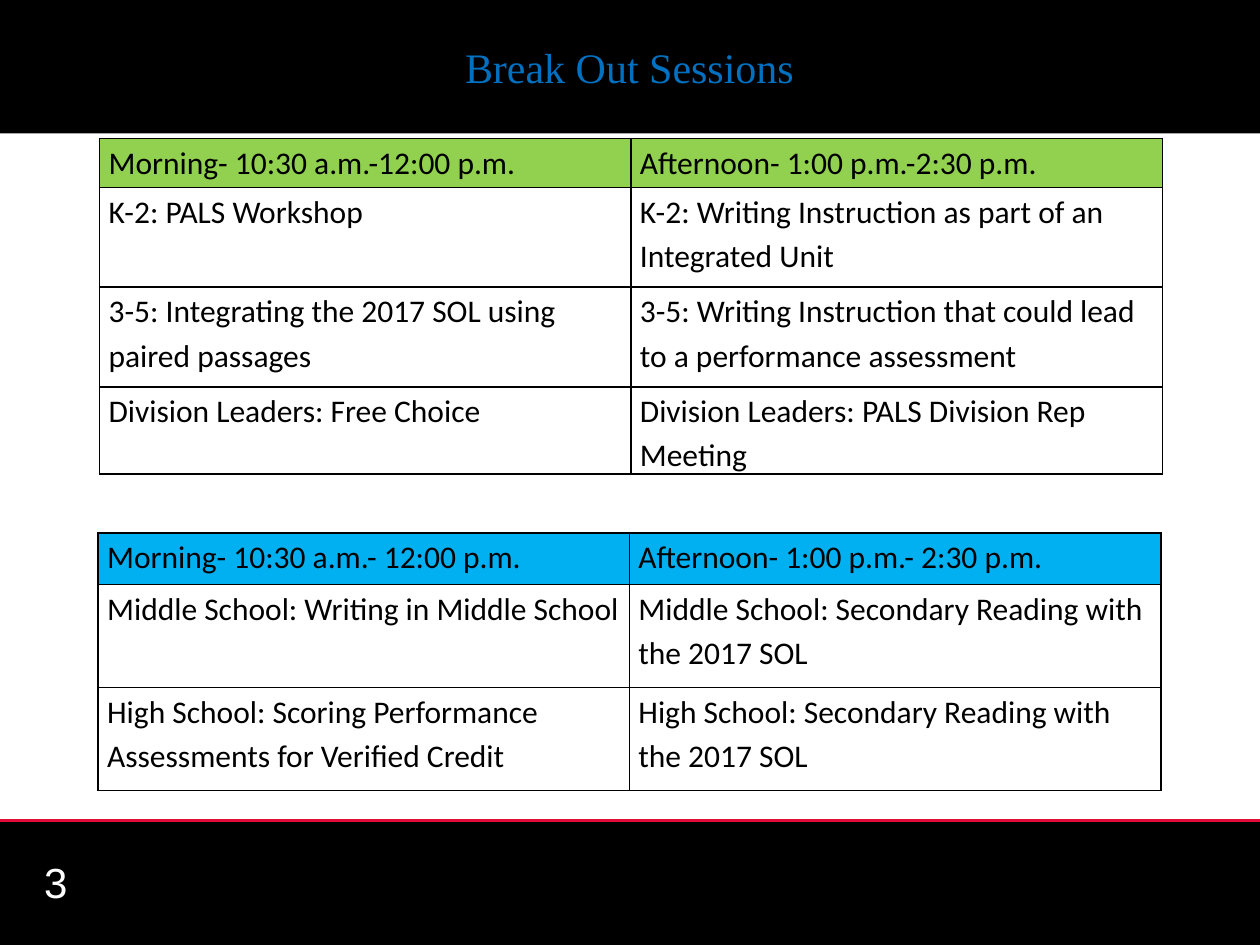
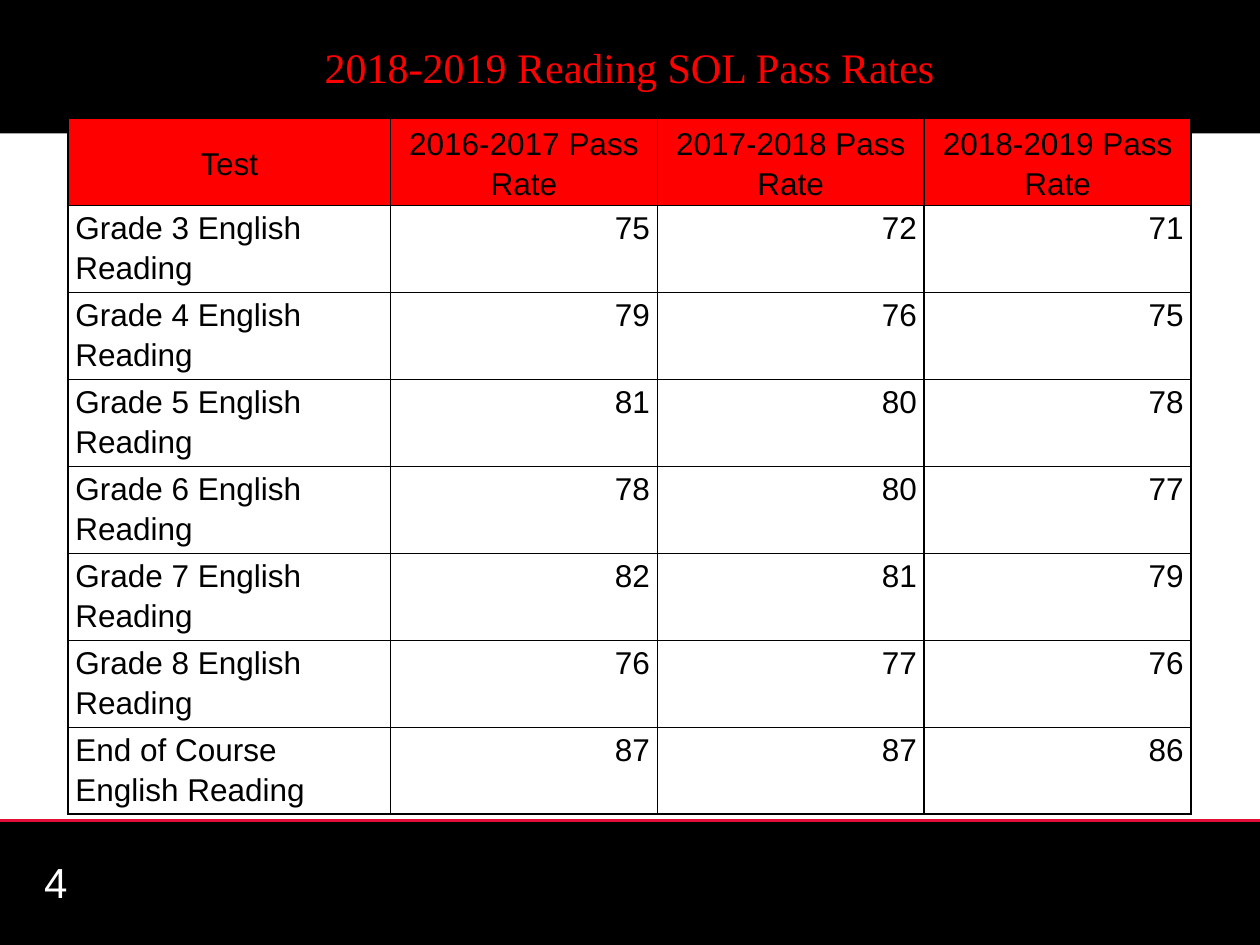
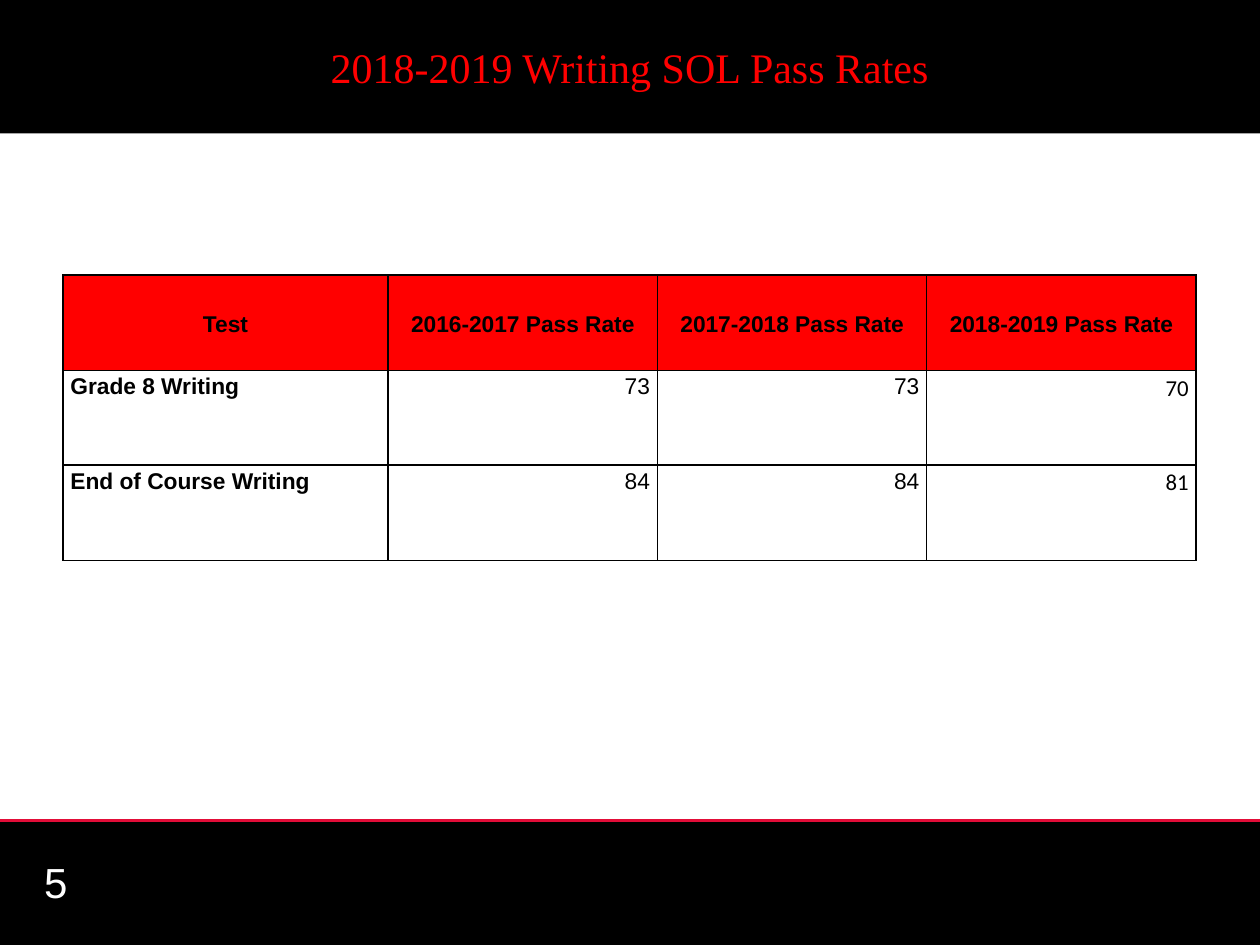
from dataclasses import dataclass

from lxml.etree import SubElement
from pptx import Presentation
from pptx.dml.color import RGBColor
from pptx.enum.shapes import MSO_CONNECTOR, MSO_SHAPE
from pptx.enum.text import MSO_ANCHOR, MSO_AUTO_SIZE, PP_ALIGN
from pptx.oxml.ns import qn
from pptx.slide import Slide
from pptx.table import _Cell
from pptx.text.text import TextFrame
from pptx.util import Cm, Pt


# Theme
@dataclass(frozen=True)
class Theme:
    black: str = "000000"
    white: str = "FFFFFF"
    rule: str = "E20D38"
    blue: str = "0070C0"
    red: str = "FF0000"
    green: str = "92D050"
    sky: str = "00B0F0"
    title_font: str = "Times New Roman"
    sans: str = "Arial"
    humanist: str = "Calibri"
    title_size: float = 24
    table_size: float = 18
    small_size: float = 13
    rule_width: float = 2
    border_width: float = 1
    table_spacing: float = 1.15


THEME = Theme()

# Shared bands, in centimetres
BAND_LEFT, BAND_WIDTH = -0.72, 26.82
TITLE_HEIGHT = 2.69
FOOTER_TOP, FOOTER_HEIGHT = 16.54, 2.54


@dataclass(frozen=True)
class Grid:
    """A table; lengths are in centimetres."""
    left: float
    top: float
    columns: list[float]
    heights: list[float]
    header_fill: str
    rows: list[tuple[str, ...]]
    font: str = THEME.sans
    last_font: str = THEME.sans
    size: float = THEME.table_size
    inset: float = 0.15
    rates: bool = True
    bold_labels: bool = False


@dataclass(frozen=True)
class Page:
    number: int
    title: str
    title_color: str
    grids: list[Grid]


# Content
RATE_HEADER = ("Test", "2016-2017 Pass Rate", "2017-2018 Pass Rate", "2018-2019 Pass Rate")

SECONDARY = Grid(
    1.98, 10.74, [10.71] * 2, [1.04, 2.08, 2.08], THEME.sky,
    [("Morning- 10:30 a.m.- 12:00 p.m.", "Afternoon- 1:00 p.m.- 2:30 p.m."),
     ("Middle School: Writing in Middle School",
      "Middle School: Secondary Reading with the 2017 SOL"),
     ("High School: Scoring Performance Assessments for Verified Credit",
      "High School: Secondary Reading with the 2017 SOL")],
    font=THEME.humanist, last_font=THEME.humanist, inset=0.18, rates=False)

ELEMENTARY = Grid(
    2.01, 2.79, [10.71] * 2, [0.99, 2.01, 2.01, 1.35], THEME.green,
    [("Morning- 10:30 a.m.-12:00 p.m.", "Afternoon- 1:00 p.m.-2:30 p.m."),
     ("K-2: PALS Workshop", "K-2: Writing Instruction as part of an Integrated Unit"),
     ("3-5: Integrating the 2017 SOL using paired passages",
      "3-5: Writing Instruction that could lead to a performance assessment"),
     ("Division Leaders: Free Choice", "Division Leaders: PALS Division Rep Meeting")],
    font=THEME.humanist, last_font=THEME.humanist, inset=0.18, rates=False)

READING = Grid(
    1.37, 2.39, [6.5] + [5.38] * 3, [1.74] * 8, THEME.red,
    [RATE_HEADER,
     ("Grade 3 English Reading", "75", "72", "71"),
     ("Grade 4 English Reading", "79", "76", "75"),
     ("Grade 5 English Reading", "81", "80", "78"),
     ("Grade 6 English Reading", "78", "80", "77"),
     ("Grade 7 English Reading", "82", "81", "79"),
     ("Grade 8 English Reading", "76", "77", "76"),
     ("End of Course English Reading", "87", "87", "86")])

WRITING = Grid(
    1.27, 5.54, [6.55] + [5.43] * 3, [1.93, 1.9, 1.93], THEME.red,
    [RATE_HEADER,
     ("Grade 8 Writing", "73", "73", "70"),
     ("End of Course Writing", "84", "84", "81")],
    last_font=THEME.humanist, size=THEME.small_size, bold_labels=True)

PAGES = [
    Page(3, "Break Out Sessions", THEME.blue, [SECONDARY, ELEMENTARY]),
    Page(4, "2018-2019 Reading SOL Pass Rates", THEME.red, [READING]),
    Page(5, "2018-2019 Writing SOL Pass Rates", THEME.red, [WRITING]),
]


# Drawing
def write(frame: TextFrame, text: str, *, font: str, size: float, color: str,
          bold: bool = False, align: PP_ALIGN = PP_ALIGN.LEFT, spacing: float = 1.0) -> None:
    para = frame.paragraphs[0]
    para.alignment = align
    para.line_spacing = spacing
    span = para.add_run()
    span.text = text
    span.font.name = font
    span.font.size = Pt(size)
    span.font.bold = bold
    span.font.color.rgb = RGBColor.from_string(color)


def draw_title(slide: Slide, page: Page) -> None:
    box = slide.shapes.title
    box.left, box.top = Cm(BAND_LEFT), Cm(0)
    box.width, box.height = Cm(BAND_WIDTH), Cm(TITLE_HEIGHT)
    box.fill.solid()
    box.fill.fore_color.rgb = RGBColor.from_string(THEME.black)
    frame = box.text_frame
    frame.auto_size = MSO_AUTO_SIZE.NONE
    frame.vertical_anchor = MSO_ANCHOR.MIDDLE
    frame.margin_left = frame.margin_right = Cm(1.27)
    frame.margin_top = frame.margin_bottom = 0
    write(frame, page.title, font=THEME.title_font, size=THEME.title_size,
          color=page.title_color, align=PP_ALIGN.CENTER)


def draw_footer(slide: Slide, number: int) -> None:
    band = slide.shapes.add_shape(MSO_SHAPE.RECTANGLE, Cm(BAND_LEFT), Cm(FOOTER_TOP),
                                  Cm(BAND_WIDTH), Cm(FOOTER_HEIGHT))
    band.shadow.inherit = False
    band.fill.solid()
    band.fill.fore_color.rgb = RGBColor.from_string(THEME.black)
    band.line.fill.background()

    rule = slide.shapes.add_connector(MSO_CONNECTOR.STRAIGHT, Cm(BAND_LEFT), Cm(FOOTER_TOP),
                                      Cm(BAND_LEFT + BAND_WIDTH), Cm(FOOTER_TOP))
    rule.line.color.rgb = RGBColor.from_string(THEME.rule)
    rule.line.width = Pt(THEME.rule_width)
    SubElement(rule._element.spPr, qn("a:effectLst"))

    box = slide.shapes.add_textbox(Cm(0.64), Cm(17.27), Cm(5.92), Cm(1.02))
    box.text_frame.word_wrap = True
    box.text_frame.vertical_anchor = MSO_ANCHOR.MIDDLE
    write(box.text_frame, str(number), font=THEME.sans, size=THEME.title_size,
          color=THEME.white)


def draw_borders(cell: _Cell) -> None:
    properties = cell._tc.get_or_add_tcPr()
    for side in ("lnL", "lnR", "lnT", "lnB"):
        line = SubElement(properties, qn(f"a:{side}"), w=str(Pt(THEME.border_width)))
        fill = SubElement(line, qn("a:solidFill"))
        SubElement(fill, qn("a:srgbClr"), val=THEME.black)


def draw_cell(cell: _Cell, text: str, grid: Grid, row: int, column: int) -> None:
    header = row == 0
    draw_borders(cell)
    if header:
        cell.fill.solid()
        cell.fill.fore_color.rgb = RGBColor.from_string(grid.header_fill)
    else:
        cell.fill.background()
    cell.margin_left = cell.margin_right = Cm(grid.inset)
    cell.margin_top = cell.margin_bottom = 0

    align = PP_ALIGN.LEFT
    if grid.rates and header:
        align = PP_ALIGN.CENTER
        cell.vertical_anchor = MSO_ANCHOR.MIDDLE
    elif grid.rates and column > 0:
        align = PP_ALIGN.RIGHT
    last_value = not header and column == len(grid.columns) - 1
    write(cell.text_frame, text, font=grid.last_font if last_value else grid.font,
          size=grid.size, color=THEME.black, align=align, spacing=THEME.table_spacing,
          bold=grid.bold_labels and (header or column == 0))


def draw_grid(slide: Slide, grid: Grid) -> None:
    table = slide.shapes.add_table(
        len(grid.rows), len(grid.columns), Cm(grid.left), Cm(grid.top),
        Cm(sum(grid.columns)), Cm(sum(grid.heights))).table
    table.first_row = table.horz_banding = False
    for column, width in zip(table.columns, grid.columns):
        column.width = Cm(width)
    for row, height in zip(table.rows, grid.heights):
        row.height = Cm(height)
    for row, texts in enumerate(grid.rows):
        for column, text in enumerate(texts):
            draw_cell(table.cell(row, column), text, grid, row, column)


def main() -> None:
    deck = Presentation()
    deck.slide_width, deck.slide_height = Cm(25.4), Cm(19.05)
    title_only = deck.slide_layouts.get_by_name("Title Only")
    for page in PAGES:
        slide = deck.slides.add_slide(title_only)
        draw_footer(slide, page.number)
        draw_title(slide, page)
        for grid in page.grids:
            draw_grid(slide, grid)
    deck.save("out.pptx")


if __name__ == "__main__":
    main()
